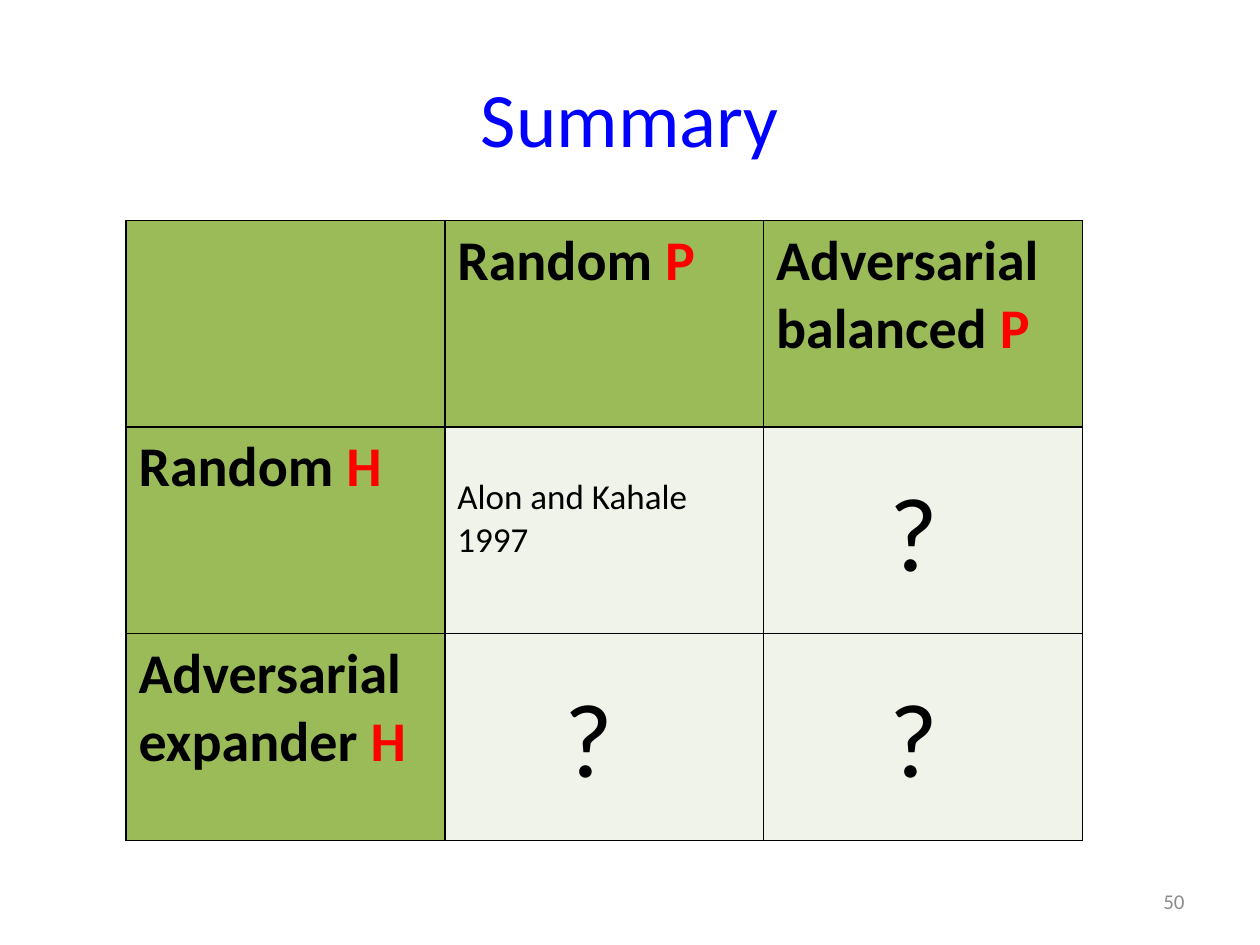
from lxml import etree
from pptx import Presentation, util as u
from pptx.dml.color import RGBColor
from pptx.enum import text
from pptx.oxml.ns import qn

FONT = "Calibri"
BLACK, RED, BLUE, GREY = "000000", "FF0000", "0000FF", "8C8C8C"
HEADER_FILL, BODY_FILL = "9BBB59", "EFF3EA"
COLUMN_WIDTH, ROW_HEIGHT = 2.53, 1.64
CELL_MARGIN = 0.1

# Header cells pair a label with a red symbol; body cells hold plain text
COLUMN_HEADERS = [("Random ", "P"), ("Adversarial balanced ", "P")]
ROWS = [
    (("Random ", "H"), ["Alon and Kahale 1997", "?"]),
    (("Adversarial expander ", "H"), ["?", "?"]),
]
QUESTION_INDENTS = {1: 0.95, 2: 1.0}


def color(value):
    return RGBColor.from_string(value)


def format_paragraph(paragraph, size, fill, bold=False, alignment=None):
    font = paragraph.font
    font.name, font.size, font.bold = FONT, u.Pt(size), bold
    font.color.rgb = color(fill)
    paragraph.alignment = alignment


def add_title(slide, words):
    title = slide.shapes.title
    title.left, title.top = u.Inches(0.5), u.Inches(0.3)
    title.width, title.height = u.Inches(9), u.Inches(1.25)
    title.text_frame.text = words
    title.text_frame.vertical_anchor = text.MSO_ANCHOR.MIDDLE
    format_paragraph(title.text_frame.paragraphs[0], 44, BLUE,
                     alignment=text.PP_ALIGN.CENTER)


def add_page_number(slide, number):
    box = slide.shapes.add_textbox(u.Inches(7.17), u.Inches(6.95),
                                   u.Inches(2.33), u.Inches(0.4))
    frame = box.text_frame
    frame.word_wrap = True
    frame.vertical_anchor = text.MSO_ANCHOR.MIDDLE
    frame.text = number
    format_paragraph(frame.paragraphs[0], 12, GREY,
                     alignment=text.PP_ALIGN.RIGHT)


def style_cell(cell, fill):
    properties = cell._tc.get_or_add_tcPr()
    for side in ("a:lnL", "a:lnR", "a:lnT", "a:lnB"):
        line = etree.SubElement(properties, qn(side), w=str(u.Pt(1)))
        solid = etree.SubElement(line, qn("a:solidFill"))
        etree.SubElement(solid, qn("a:srgbClr"), val=BLACK)
    cell.fill.solid()
    cell.fill.fore_color.rgb = color(fill)


def fill_header(cell, label, symbol):
    paragraph = cell.text_frame.paragraphs[0]
    format_paragraph(paragraph, 32, BLACK, bold=True)
    for words, fill in ((label, BLACK), (symbol, RED)):
        run = paragraph.add_run()
        run.text = words
        run.font.color.rgb = color(fill)
        run.font.bold = True


def fill_body(cell, words, column):
    is_open = words == "?"
    cell.text_frame.text = words
    format_paragraph(cell.text_frame.paragraphs[0], 60 if is_open else 20, BLACK)
    cell.margin_top = u.Inches(0.35 if is_open else 0.39)
    cell.margin_left = u.Inches(QUESTION_INDENTS[column] if is_open else CELL_MARGIN)


def add_summary_table(slide):
    count = len(COLUMN_HEADERS) + 1
    frame = slide.shapes.add_table(
        len(ROWS) + 1, count, u.Inches(1), u.Inches(1.75),
        u.Inches(COLUMN_WIDTH * count), u.Inches(ROW_HEIGHT * (len(ROWS) + 1)))
    table = frame.table
    for column in table.columns:
        column.width = u.Inches(COLUMN_WIDTH)
    for row in table.rows:
        row.height = u.Inches(ROW_HEIGHT)

    # Green first row and first column, pale body
    for i in range(len(ROWS) + 1):
        for j in range(count):
            style_cell(table.cell(i, j), BODY_FILL if i and j else HEADER_FILL)

    for j, header in enumerate(COLUMN_HEADERS, 1):
        fill_header(table.cell(0, j), *header)
    for i, (header, entries) in enumerate(ROWS, 1):
        fill_header(table.cell(i, 0), *header)
        for j, words in enumerate(entries, 1):
            fill_body(table.cell(i, j), words, j)


def main():
    presentation = Presentation()
    presentation.slide_width, presentation.slide_height = u.Inches(10), u.Inches(7.5)
    slide = presentation.slides.add_slide(presentation.slide_layouts[5])
    add_title(slide, "Summary")
    add_page_number(slide, "50")
    add_summary_table(slide)
    presentation.save("out.pptx")


if __name__ == "__main__":
    main()
